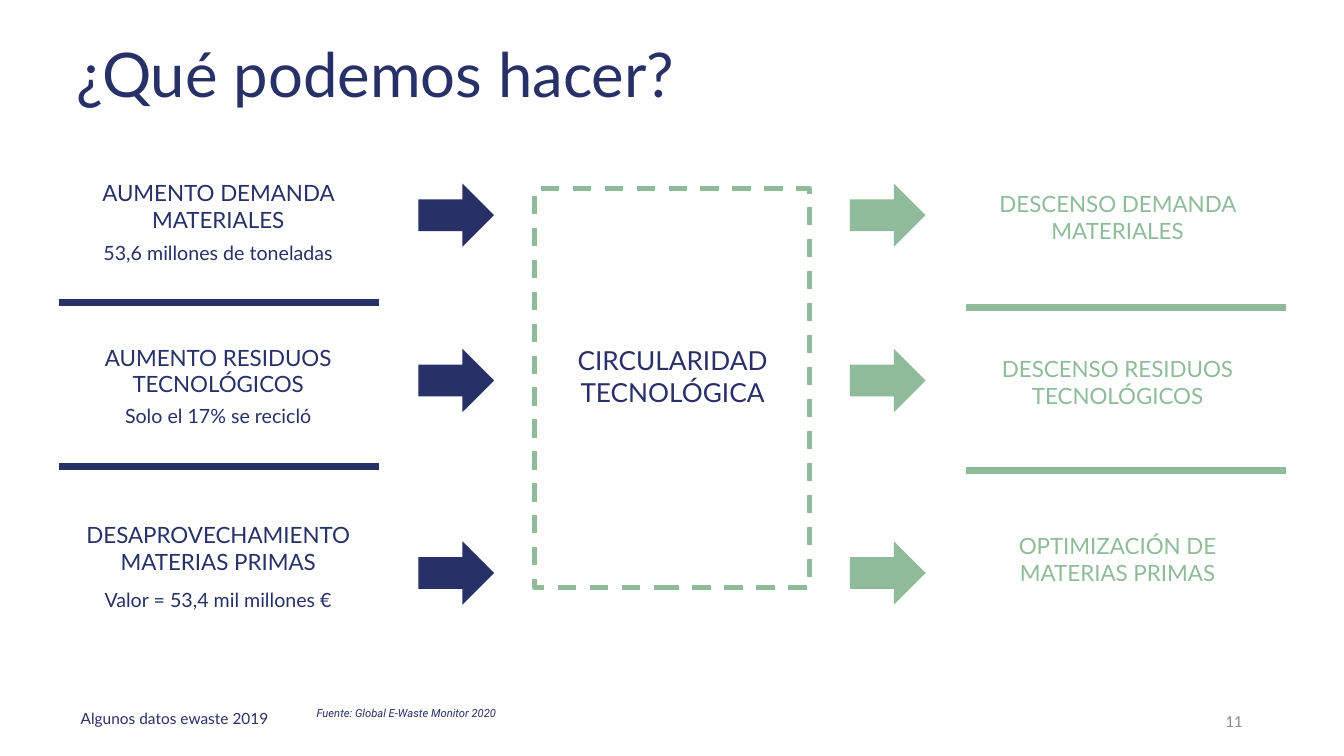
from lxml.etree import SubElement
from pptx import Presentation
from pptx.dml.color import RGBColor
from pptx.enum.dml import MSO_LINE
from pptx.enum.shapes import MSO_CONNECTOR, MSO_SHAPE
from pptx.enum.text import MSO_ANCHOR, PP_ALIGN
from pptx.oxml.ns import qn
from pptx.util import Pt

PX = 9144
NAVY = RGBColor(0x27, 0x31, 0x67)
INDIGO = RGBColor(0x29, 0x2F, 0x68)
GREEN = RGBColor(0x8F, 0xBB, 0x9A)
GRAY = RGBColor(0x8C, 0x8C, 0x8C)


def write(sp, lines, size, color, align=PP_ALIGN.LEFT, font="Lato", italic=False, inset=13):
    tf = sp.text_frame
    tf.word_wrap = True
    tf.margin_left = tf.margin_right = tf.margin_top = tf.margin_bottom = inset * PX
    for i, line in enumerate(lines):
        p = tf.paragraphs[0] if i == 0 else tf.add_paragraph()
        p.alignment = align
        r = p.add_run()
        r.text = line
        r.font.name = font
        r.font.size = Pt(size)
        r.font.italic = italic
        r.font.color.rgb = color


def box(x, y, w, h):
    return s.shapes.add_textbox(x * PX, y * PX, w * PX, h * PX)


prs = Presentation()
prs.slide_width = 1333 * PX
prs.slide_height = 750 * PX
s = prs.slides.add_slide(prs.slide_layouts[5])

title = s.shapes.title
title.left, title.top, title.width, title.height = 66 * PX, 31 * PX, 770 * PX, 84 * PX
write(title, ["¿Qué podemos hacer?"], 44, NAVY, inset=10)
title.text_frame.margin_top = title.text_frame.margin_bottom = 5 * PX
title.text_frame.vertical_anchor = MSO_ANCHOR.TOP

problems = [
    (165, ["AUMENTO DEMANDA MATERIALES"], 227, "53,6 millones de toneladas"),
    (328, ["AUMENTO RESIDUOS TECNOLÓGICOS"], 389, "Solo el 17% se recicló"),
    (504, ["DESAPROVECHAMIENTO", "MATERIAS PRIMAS"], 572, "Valor = 53,4 mil millones €"),
]
for y, heading, detail_y, detail in problems:
    write(box(66, y, 301, 76), heading, 16, NAVY, PP_ALIGN.CENTER)
    write(box(66, detail_y, 301, 56), [detail], 14, NAVY, PP_ALIGN.CENTER)

results = [
    (176, ["DESCENSO DEMANDA MATERIALES"]),
    (339, ["DESCENSO RESIDUOS TECNOLÓGICOS"]),
    (515, ["OPTIMIZACIÓN DE", "MATERIAS PRIMAS"]),
]
for y, heading in results:
    write(box(958, y, 301, 95), heading, 16, GREEN, PP_ALIGN.CENTER)

for x, color in [(415, NAVY), (843, GREEN)]:
    for y in (182, 346, 537):
        arrow = s.shapes.add_shape(MSO_SHAPE.RIGHT_ARROW, x * PX, y * PX, 75 * PX, 63 * PX)
        arrow.shadow.inherit = False
        arrow.fill.solid()
        arrow.fill.fore_color.rgb = color
        arrow.line.fill.background()

for x, color, ys in [(59, NAVY, (300, 463)), (958, GREEN, (305, 467))]:
    for y in ys:
        rule = s.shapes.add_connector(MSO_CONNECTOR.STRAIGHT, x * PX, y * PX, (x + 317) * PX, y * PX)
        rule.line.color.rgb = color
        rule.line.width = Pt(5.25)
        SubElement(rule.element.spPr, qn("a:effectLst"))

frame = s.shapes.add_shape(MSO_SHAPE.RECTANGLE, 530 * PX, 187 * PX, 273 * PX, 396 * PX)
frame.shadow.inherit = False
frame.fill.background()
frame.line.color.rgb = GREEN
frame.line.width = Pt(3.25)
frame.line.dash_style = MSO_LINE.DASH
write(box(523, 329, 288, 106), ["CIRCULARIDAD", "TECNOLÓGICA"], 18.7, INDIGO, PP_ALIGN.CENTER)

write(box(67, 694, 238, 40), ["Algunos datos ewaste 2019"], 11, INDIGO)
write(box(301, 694, 378, 49), ["Fuente: Global E-Waste Monitor 2020"], 8, INDIGO, font="Roboto", italic=True)
number = box(942, 695, 300, 40)
write(number, ["11"], 12, GRAY, PP_ALIGN.RIGHT, font="Calibri", inset=10)
number.text_frame.vertical_anchor = MSO_ANCHOR.MIDDLE

prs.save("out.pptx")
